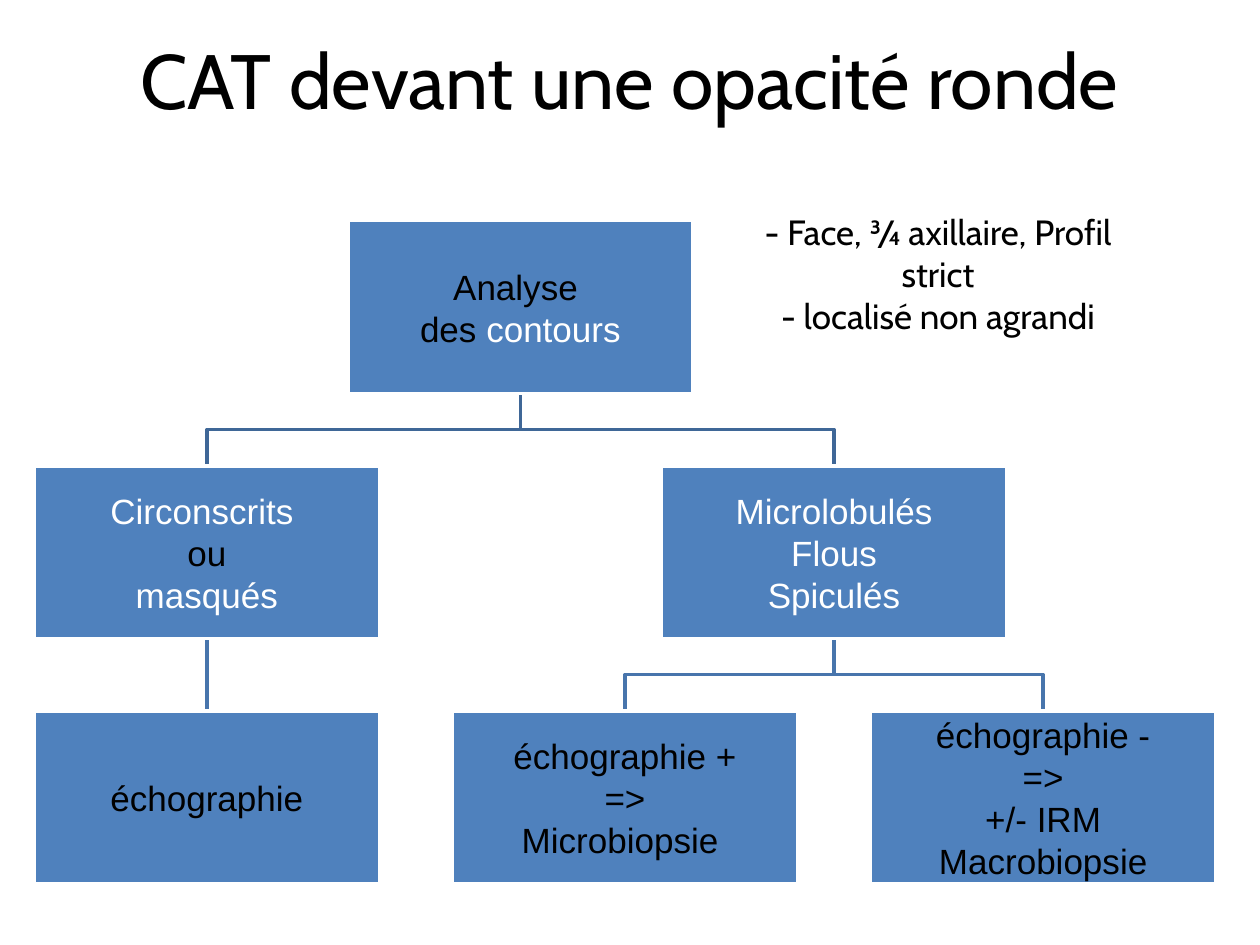
from lxml.etree import SubElement
from pptx import Presentation
from pptx.dml.color import RGBColor
from pptx.enum.shapes import MSO_CONNECTOR as Connector, MSO_SHAPE as Shape
from pptx.enum.text import MSO_ANCHOR as Anchor, PP_ALIGN as Align
from pptx.oxml.ns import qn
from pptx.util import Cm, Pt

BLACK, WHITE, BLUE = "000000", "FFFFFF", "4F81BD"
UPPER_LINK, LOWER_LINK = "3F6797", "4875AC"
BOX_WIDTH, BOX_HEIGHT = 6.96, 3.48
LEFT, TOP = 0.69, 4.45
COLUMN_STEP, ROW_STEP = 8.43, 4.94

# Each box: column, row, and lines made of (text, colour) runs.
BOXES = {
    "contours": (0.75, 0, [[("Analyse ", BLACK)],
                           [("des ", BLACK), ("contours", WHITE)]]),
    "circonscrits": (0, 1, [[("Circonscrits ", WHITE)], [("ou", BLACK)],
                            [("masqués", WHITE)]]),
    "microlobulés": (1.5, 1, [[("Microlobulés", WHITE)], [("Flous", WHITE)],
                              [("Spiculés", WHITE)]]),
    "échographie": (0, 2, [[("échographie", BLACK)]]),
    "positive": (1, 2, [[("échographie +", BLACK)], [("=>", BLACK)],
                        [("Microbiopsie ", BLACK)]]),
    "négative": (2, 2, [[("échographie -", BLACK)], [("=>", BLACK)],
                        [("+/- IRM", BLACK)], [("Macrobiopsie", BLACK)]]),
}
LINKS = [
    ("microlobulés", "négative", LOWER_LINK),
    ("microlobulés", "positive", LOWER_LINK),
    ("contours", "microlobulés", UPPER_LINK),
    ("circonscrits", "échographie", LOWER_LINK),
    ("contours", "circonscrits", UPPER_LINK),
]


def rgb(colour):
    """Turn a hex string into a colour."""
    return RGBColor.from_string(colour)


def place(shape, left, top, width, height):
    """Position a shape in centimetres."""
    shape.left, shape.top = Cm(left), Cm(top)
    shape.width, shape.height = Cm(width), Cm(height)


def format_font(font, name, size, colour):
    """Set the typeface, size and colour of a font."""
    font.name, font.size = name, Pt(size)
    font.color.rgb = rgb(colour)


def write_lines(text_frame, lines, name, size):
    """Write centred paragraphs made of coloured runs."""
    text_frame.word_wrap = True
    for index, line in enumerate(lines):
        paragraph = text_frame.add_paragraph() if index else text_frame.paragraphs[0]
        paragraph.alignment = Align.CENTER
        for text, colour in line:
            run = paragraph.add_run()
            run.text = text
            format_font(run.font, name, size, colour)


def box_position(key):
    """Return the left and top of a box on the grid."""
    column, row, _ = BOXES[key]
    return LEFT + column * COLUMN_STEP, TOP + row * ROW_STEP


def add_title(slide, text):
    """Fill and place the title placeholder."""
    title = slide.shapes.title
    place(title, 1.9, 0, 21.59, 3.18)
    title.text_frame.vertical_anchor = Anchor.MIDDLE
    write_lines(title.text_frame, [[(text, BLACK)]], "Cabin", 44)


def add_box(slide, key):
    """Add one box of the decision tree."""
    left, top = box_position(key)
    shape = slide.shapes.add_shape(
        Shape.RECTANGLE, Cm(left), Cm(top), Cm(BOX_WIDTH), Cm(BOX_HEIGHT))
    shape.shadow.inherit = False
    shape.fill.solid()
    shape.fill.fore_color.rgb = rgb(BLUE)
    shape.line.color.rgb = rgb(WHITE)
    shape.line.width = Pt(2)
    text_frame = shape.text_frame
    text_frame.margin_left = text_frame.margin_right = Cm(0.03)
    text_frame.margin_top = text_frame.margin_bottom = Cm(0.03)
    text_frame.vertical_anchor = Anchor.MIDDLE
    write_lines(text_frame, BOXES[key][2], "Arial", 20)


def add_link(slide, parent, child, colour):
    """Join two boxes with a straight or stepped line."""
    (start, upper), (end, bottom) = box_position(parent), box_position(child)
    start_x, end_x = Cm(start + BOX_WIDTH / 2), Cm(end + BOX_WIDTH / 2)
    top = Cm(upper + BOX_HEIGHT)
    bottom = Cm(bottom)
    if start_x == end_x:
        link = slide.shapes.add_connector(
            Connector.STRAIGHT, start_x, top, end_x, bottom)
        SubElement(link.element.spPr, qn("a:effectLst"))
    else:
        middle = (top + bottom) // 2
        builder = slide.shapes.build_freeform(start_x, top)
        builder.add_line_segments(
            [(start_x, middle), (end_x, middle), (end_x, bottom)], close=False)
        link = builder.convert_to_shape()
        link.shadow.inherit = False
        link.fill.background()
    link.line.color.rgb = rgb(colour)
    link.line.width = Pt(2)


def add_note(slide, texts):
    """Add the free text beside the top box."""
    note = slide.shapes.add_textbox(Cm(14.91), Cm(4.11), Cm(8), Cm(2.8))
    write_lines(note.text_frame, [[(text, BLACK)] for text in texts], "Cabin", 20)


def main():
    """Build the slide and save it."""
    presentation = Presentation()
    presentation.slide_width, presentation.slide_height = Cm(25.4), Cm(19.05)
    slide = presentation.slides.add_slide(presentation.slide_layouts[5])
    add_title(slide, "CAT devant une opacité ronde")
    for parent, child, colour in LINKS:
        add_link(slide, parent, child, colour)
    for key in BOXES:
        add_box(slide, key)
    add_note(slide, ["- Face, ¾ axillaire, Profil strict", "- localisé non agrandi"])
    presentation.save("out.pptx")


if __name__ == "__main__":
    main()
